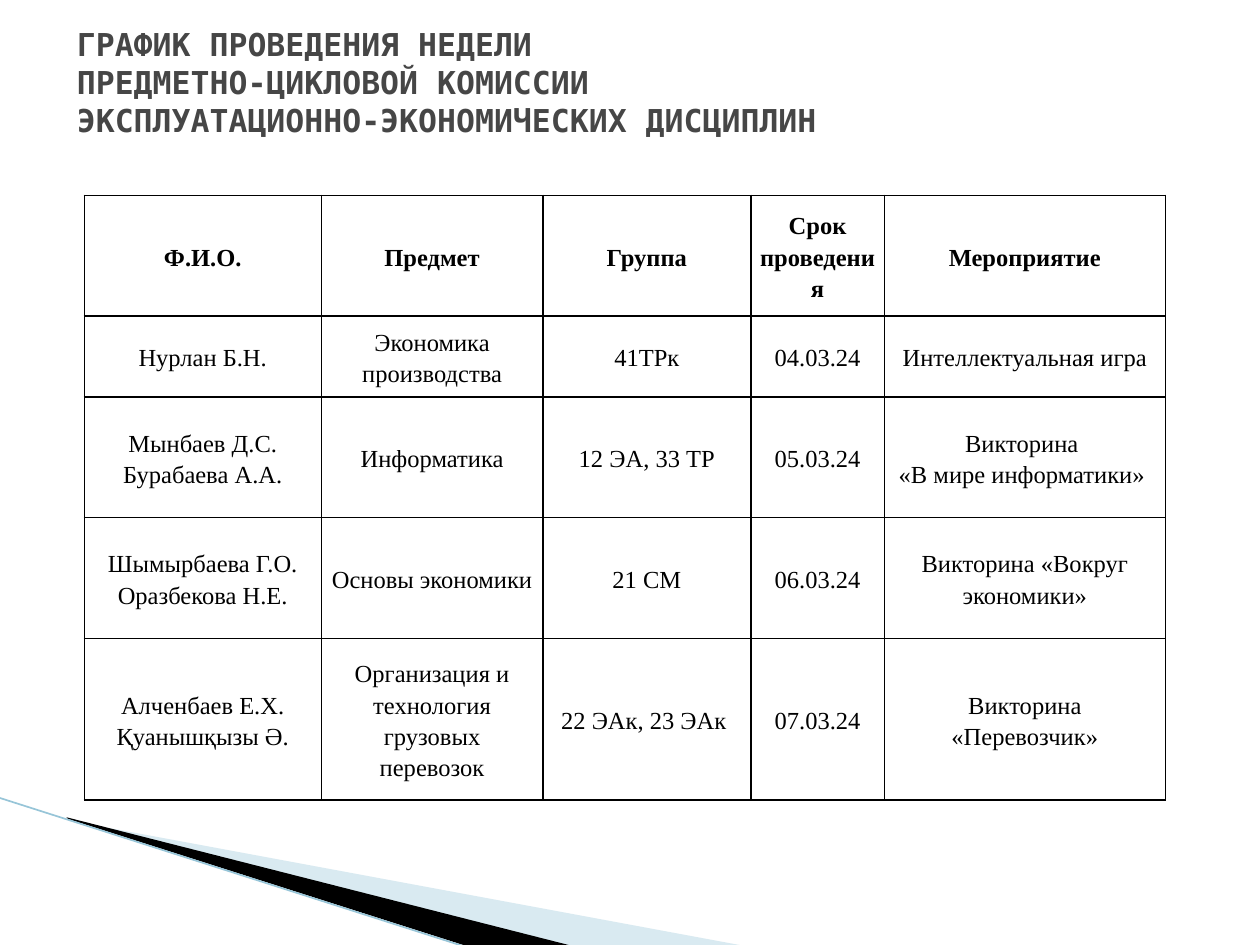
import dataclasses
import typing

import lxml.etree
import pptx
import pptx.dml.color
import pptx.enum.shapes
import pptx.enum.text
import pptx.oxml.ns
import pptx.util

Pt = pptx.util.Pt
qn = pptx.oxml.ns.qn
MID = pptx.enum.text.MSO_ANCHOR.MIDDLE
ALIGN = pptx.enum.text.PP_ALIGN

HUES = {"ink": "000000", "title": "464646", "pale": "A0CBDC", "edge": "97C5D8"}


@dataclasses.dataclass
class Wedge:
    dots: list[tuple[float, float]]
    hue: str
    alpha: int = 100


WEDGES = [
    Wedge([(39.6, 468.7), (428.4, 540.7), (328.3, 540.7), (39.6, 468)], "pale", 40),
    Wedge([(38.2, 467.3), (329, 540.7), (267.8, 541.4), (38.9, 468)], "ink"),
]

TITLE = "\v".join([
    "ГРАФИК ПРОВЕДЕНИЯ НЕДЕЛИ",
    "ПРЕДМЕТНО-ЦИКЛОВОЙ КОМИССИИ",
    "ЭКСПЛУАТАЦИОННО-ЭКОНОМИЧЕСКИХ ДИСЦИПЛИН",
])

COLS = [135.4, 126.7, 118.8, 76.3, 160.6]
ROWS = [69.1, 46.1, 69.1, 69.1, 92.2]
DATA = [
    ["Ф.И.О.", "Предмет", "Группа", "Срок проведения", "Мероприятие"],
    ["Нурлан Б.Н.", "Экономика производства", "41ТРк", "04.03.24",
     "Интеллектуальная игра"],
    ["Мынбаев Д.С. Бурабаева А.А.", "Информатика", "12 ЭА, 33 ТР", "05.03.24",
     "Викторина \n«В мире информатики» "],
    ["Шымырбаева Г.О.\nОразбекова Н.Е.", "Основы экономики", "21 СМ", "06.03.24",
     "Викторина «Вокруг экономики»"],
    ["Алченбаев Е.Х. Қуанышқызы Ә.", "Организация и технология грузовых перевозок",
     "22 ЭАк, 23 ЭАк ", "07.03.24", "Викторина «Перевозчик»"],
]

HEAD_FONT = {"name": "DejaVu Sans Mono", "size": Pt(18), "bold": True}
CELL_FONT = {"name": "Times New Roman", "size": Pt(14)}
HEAD_BOX = {"left": Pt(36.7), "top": Pt(20.9), "width": Pt(648), "height": Pt(73.4)}
HEAD_FRAME = {"word_wrap": True, "auto_size": pptx.enum.text.MSO_AUTO_SIZE.NONE,
              "vertical_anchor": MID, "margin_left": Pt(7.2), "margin_right": Pt(7.2),
              "margin_top": Pt(0), "margin_bottom": Pt(21.6)}
CELL_BOX = {"vertical_anchor": MID, "margin_left": Pt(5), "margin_right": Pt(5),
            "margin_top": Pt(0), "margin_bottom": Pt(0)}
CELL_PARA = {"alignment": ALIGN.CENTER, "line_spacing": 1.15}
HEAD_PARA = {"alignment": ALIGN.LEFT, "line_spacing": 1.0}


def apply(item: typing.Any, vals: dict[str, typing.Any]) -> None:
    for key, val in vals.items():
        setattr(item, key, val)


def rgb(hue: str) -> pptx.dml.color.RGBColor:
    return pptx.dml.color.RGBColor.from_string(HUES[hue])


def style(frame: typing.Any, para: dict, font: dict, hue: str) -> None:
    for line in frame.paragraphs:
        apply(line, para)
        for run in line.runs:
            apply(run.font, font)
            run.font.color.rgb = rgb(hue)


def draw_wedge(slide: typing.Any, wedge: Wedge) -> None:
    pen = slide.shapes.build_freeform(*wedge.dots[0], scale=Pt(1))
    pen.add_line_segments(wedge.dots[1:], close=True)
    shape = pen.convert_to_shape()
    shape.shadow.inherit = False
    shape.fill.solid()
    shape.fill.fore_color.rgb = rgb(wedge.hue)
    shape.line.fill.background()
    if wedge.alpha < 100:
        tint = shape.fill._xPr.find(".//" + qn("a:srgbClr"))
        lxml.etree.SubElement(tint, qn("a:alpha"), val=str(wedge.alpha * 1000))


def draw_edge(slide: typing.Any) -> None:
    edge = slide.shapes.add_connector(
        pptx.enum.shapes.MSO_CONNECTOR.STRAIGHT,
        Pt(-0.7), Pt(455.8), Pt(267.1), Pt(541.4))
    edge.line.color.rgb = rgb("edge")
    edge.line.width = Pt(0.95)
    lxml.etree.SubElement(edge._element.spPr, qn("a:effectLst"))


def draw_title(slide: typing.Any) -> None:
    title = slide.shapes.title
    apply(title, HEAD_BOX)
    apply(title.text_frame, HEAD_FRAME)
    title.text_frame.text = TITLE
    style(title.text_frame, HEAD_PARA, HEAD_FONT, "title")


def add_rules(cell: typing.Any) -> None:
    props = cell._tc.get_or_add_tcPr()
    for spot, side in enumerate(["lnL", "lnR", "lnT", "lnB"]):
        rule = lxml.etree.Element(qn("a:" + side), w=str(Pt(1)))
        fill = lxml.etree.SubElement(rule, qn("a:solidFill"))
        lxml.etree.SubElement(fill, qn("a:srgbClr"), val=HUES["ink"])
        props.insert(spot, rule)


def draw_table(slide: typing.Any) -> None:
    table = slide.shapes.add_table(
        len(ROWS), len(COLS), Pt(48.2), Pt(111.6), Pt(sum(COLS)), Pt(sum(ROWS))).table
    apply(table, {"first_row": False, "horz_banding": False})
    for col, width in zip(table.columns, COLS):
        col.width = Pt(width)
    for row, height, words in zip(table.rows, ROWS, DATA):
        row.height = Pt(height)
        font = CELL_FONT | {"bold": words is DATA[0]}
        for cell, text in zip(row.cells, words):
            cell.text = text
            apply(cell, CELL_BOX)
            cell.fill.background()
            style(cell.text_frame, CELL_PARA, font, "ink")
            add_rules(cell)


def main() -> None:
    deck = pptx.Presentation()
    apply(deck, {"slide_width": Pt(720), "slide_height": Pt(540)})
    slide = deck.slides.add_slide(deck.slide_layouts[5])
    for wedge in WEDGES:
        draw_wedge(slide, wedge)
    draw_edge(slide)
    draw_title(slide)
    draw_table(slide)
    deck.save("out.pptx")


if __name__ == "__main__":
    main()
